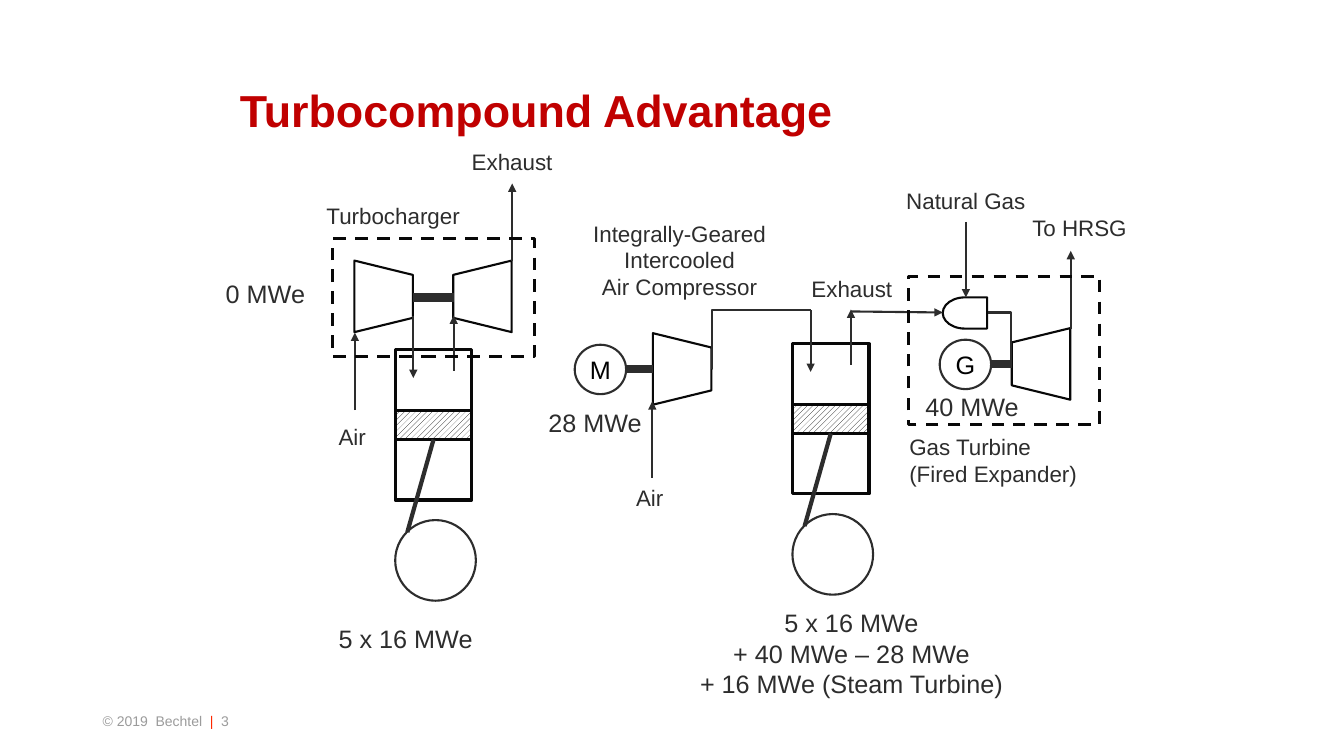
from lxml import etree
from pptx import Presentation
from pptx.dml.color import RGBColor
from pptx.enum.dml import MSO_LINE, MSO_PATTERN
from pptx.enum.shapes import MSO_CONNECTOR, MSO_SHAPE
from pptx.enum.text import MSO_ANCHOR, MSO_AUTO_SIZE, PP_ALIGN
from pptx.oxml.ns import qn
from pptx.util import Inches, Pt

FONT = "Arial"
INK, DARK, WHITE = "080808", "2D2D2D", "FFFFFF"
GREY, RED, ORANGE = "9B9B9B", "C00000", "FF2800"

# Content: left, top, width, height, size, alignment, lines
TITLE = (2.28, 0.4, 10.13, 1.45, "Turbocompound Advantage")
FOOTER = (0.92, 6.95, 3, 0.4, [("© 2019  Bechtel ", GREY), (" |  ", ORANGE), ("3", GREY)])
LEFT, CENTER = PP_ALIGN.LEFT, PP_ALIGN.CENTER
LABELS = [
    (3.14, 1.96, 1.54, 0.37, 16, LEFT, "Turbocharger"),
    (3.26, 4.15, 0.48, 0.37, 16, LEFT, "Air"),
    (4.58, 1.42, 1.01, 0.37, 16, LEFT, "Exhaust"),
    (7.95, 2.68, 1.01, 0.37, 16, LEFT, "Exhaust"),
    (8.92, 4.25, 1.88, 0.64, 16, LEFT, "Gas Turbine\n(Fired Expander)"),
    (6.21, 4.75, 0.48, 0.37, 16, LEFT, "Air"),
    (5.77, 2.13, 1.94, 0.91, 16, CENTER, "Integrally-Geared\nIntercooled\nAir Compressor"),
    (3.26, 6.13, 1.54, 0.4, 18, LEFT, "5 x 16 MWe"),
    (6.83, 5.98, 3.23, 1.01, 18, CENTER,
     "5 x 16 MWe\n+ 40 MWe – 28 MWe\n+ 16 MWe (Steam Turbine)"),
    (10.14, 2.08, 1.15, 0.37, 16, LEFT, "To HRSG"),
    (5.34, 3.99, 1.14, 0.4, 18, LEFT, "28 MWe"),
    (9.08, 3.83, 1.14, 0.4, 18, LEFT, "40 MWe"),
    (8.89, 1.81, 1.4, 0.37, 16, LEFT, "Natural Gas"),
    (2.14, 2.71, 1, 0.4, 18, LEFT, "0 MWe"),
]

# Equipment: left, top and, where needed, rotation or letter
MACHINES = [(3.45, 2.65, 270), (4.43, 2.65, 90), (6.41, 3.37, 270), (9.97, 3.32, 90)]
ENGINES = [(3.92, 3.47), (7.86, 3.41)]
ELECTRIC = [(5.7, 3.42, "M"), (9.32, 3.37, "G")]
FRAMES = [(3.3, 2.37, 2, 1.17), (9.01, 2.74, 1.9, 1.47)]

# Lines: start x, start y, end x, end y
SHAFTS = [(4.5, 2.95, 4.1, 2.95), (6.48, 3.66, 6.21, 3.66), (10.04, 3.61, 9.83, 3.61)]
FLOWS = [
    (3.52, 4.07, 3.52, 3.3), (5.08, 2.59, 5.08, 1.82), (6.47, 4.74, 6.47, 3.98),
    (10.62, 3.26, 10.62, 2.49), (8.44, 3.09, 9.35, 3.1), (9.58, 2.2, 9.58, 2.95),
]
PIPES = [(7.06, 3.66, 8.04, 3.08, 600), (9.8, 3.1, 10.04, 3.61, 96500)]

presentation = Presentation()
presentation.slide_width, presentation.slide_height = Inches(13.33), Inches(7.5)
slide = presentation.slides.add_slide(presentation.slide_layouts[6])


def color(hex_value):
    return RGBColor.from_string(hex_value)


def format_run(run, size, hex_value, bold=False):
    run.font.name, run.font.size, run.font.bold = FONT, Pt(size), bold
    run.font.color.rgb = color(hex_value)


def add_part(kind, left, top, width, height, line_color, line_width, fill=None):
    shape = slide.shapes.add_shape(
        kind, Inches(left), Inches(top), Inches(width), Inches(height))
    shape.shadow.inherit = False
    shape.line.color.rgb, shape.line.width = color(line_color), Pt(line_width)
    if fill:
        shape.fill.solid()
        shape.fill.fore_color.rgb = color(fill)
    else:
        shape.fill.background()
    return shape


def add_line(start_x, start_y, end_x, end_y, width=1.5, arrow=False, kind=MSO_CONNECTOR.STRAIGHT):
    connector = slide.shapes.add_connector(
        kind, Inches(start_x), Inches(start_y), Inches(end_x), Inches(end_y))
    connector.line.color.rgb, connector.line.width = color(DARK), Pt(width)
    if arrow:
        etree.SubElement(connector.line._get_or_add_ln(), qn("a:tailEnd"), type="triangle")
    etree.SubElement(connector._element.spPr, qn("a:effectLst"))
    return connector


def add_text_box(left, top, width, height):
    return slide.shapes.add_textbox(
        Inches(left), Inches(top), Inches(width), Inches(height)).text_frame


def add_engine(left, top):
    add_part(MSO_SHAPE.RECTANGLE, left, top, 0.76, 1.49, INK, 2.25)
    piston = add_part(MSO_SHAPE.RECTANGLE, left, top + 0.6, 0.76, 0.29, INK, 2.25)
    piston.fill.patterned()
    piston.fill.pattern = MSO_PATTERN.WIDE_UPWARD_DIAGONAL
    piston.fill.fore_color.rgb, piston.fill.back_color.rgb = color(INK), color(WHITE)
    add_part(MSO_SHAPE.OVAL, left, top + 1.69, 0.8, 0.8, DARK, 1.5, WHITE)
    rod = add_line(left + 0.38, top + 0.89, left + 0.12, top + 1.81, 3)
    rod.begin_connect(piston, 2)
    # Intake and exhaust
    add_line(left + 0.18, top - 0.33, left + 0.18, top + 0.28, arrow=True)
    add_line(left + 0.58, top + 0.21, left + 0.58, top - 0.34, arrow=True)


# Compressors, turbines and combustor
for left, top, rotation in MACHINES:
    machine = add_part(MSO_SHAPE.FLOWCHART_MANUAL_OPERATION, left, top, 0.71, 0.58, INK, 1.5, WHITE)
    machine.rotation = rotation
combustor = add_part(MSO_SHAPE.FLOWCHART_DELAY, 9.35, 2.95, 0.44, 0.31, INK, 1.5, WHITE)
combustor.rotation = 180

# Engines
for engine in ENGINES:
    add_engine(*engine)

# Shafts, flows and pipes
for shaft in SHAFTS:
    add_line(*shaft, width=6)
for flow in FLOWS:
    add_line(*flow, arrow=True)
for *ends, bend in PIPES:
    pipe = add_line(*ends, kind=MSO_CONNECTOR.ELBOW)
    adjustments = pipe._element.spPr.find(qn("a:prstGeom")).get_or_add_avLst()
    etree.SubElement(adjustments, qn("a:gd"), name="adj1", fmla=f"val {bend}")

# Motor and generator
for left, top, letter in ELECTRIC:
    frame = add_part(MSO_SHAPE.OVAL, left, top, 0.51, 0.49, DARK, 1.5, WHITE).text_frame
    frame.margin_left = frame.margin_right = frame.margin_top = frame.margin_bottom = 0
    frame.vertical_anchor = MSO_ANCHOR.MIDDLE
    frame.text = letter
    frame.paragraphs[0].alignment = CENTER
    format_run(frame.paragraphs[0].runs[0], 18, "000000")

# Dashed boundaries
for boundary in FRAMES:
    add_part(MSO_SHAPE.RECTANGLE, *boundary, INK, 2.25).line.dash_style = MSO_LINE.DASH

# Labels
for *place, size, alignment, text in LABELS:
    frame = add_text_box(*place)
    frame.word_wrap, frame.auto_size = False, MSO_AUTO_SIZE.SHAPE_TO_FIT_TEXT
    frame.text = text
    for paragraph in frame.paragraphs:
        paragraph.alignment = alignment
        format_run(paragraph.runs[0], size, DARK)

# Title
*place, text = TITLE
frame = add_text_box(*place)
frame.word_wrap, frame.vertical_anchor = True, MSO_ANCHOR.MIDDLE
frame.text = text
frame.paragraphs[0].line_spacing = 0.9
format_run(frame.paragraphs[0].runs[0], 32, RED, bold=True)

# Footer
*place, pieces = FOOTER
frame = add_text_box(*place)
frame.word_wrap, frame.vertical_anchor = True, MSO_ANCHOR.MIDDLE
for text, hex_value in pieces:
    run = frame.paragraphs[0].add_run()
    run.text = text
    format_run(run, 10, hex_value)

presentation.save("out.pptx")
